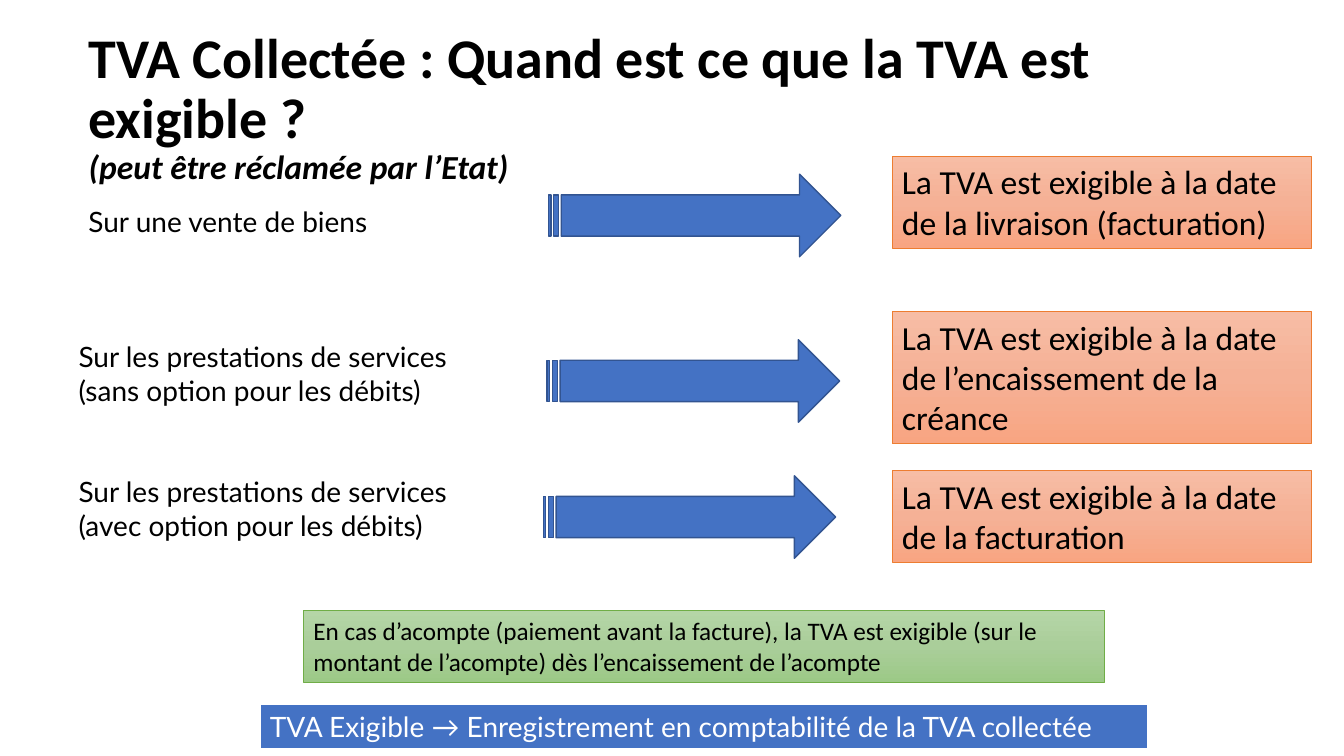
from copy import deepcopy
from dataclasses import dataclass
from typing import Any

from pptx import Presentation
from pptx.dml.color import RGBColor
from pptx.enum.shapes import MSO_SHAPE
from pptx.enum.text import MSO_ANCHOR, MSO_AUTO_SIZE, PP_ALIGN
from pptx.oxml.ns import qn
from pptx.util import Cm, Pt


@dataclass(frozen=True)
class Theme:
    black: str = "000000"
    white: str = "FFFFFF"
    blue: str = "4472C4"
    blue_line: str = "325491"
    orange: tuple[str, ...] = ("F7BDA5", "F5B196", "F8A582")
    orange_line: str = "ED7D31"
    green: tuple[str, ...] = ("B5D5A7", "AACE9A", "9CC987")
    green_line: str = "70AD47"
    heading: str = "Calibri"
    label: str = "Lato"
    title_size: int = 40
    rule_size: int = 24
    label_size: int = 20
    note_size: int = 18


@dataclass(frozen=True)
class Box:
    left: float
    top: float
    width: float
    height: float

    def lengths(self) -> tuple[Cm, ...]:
        return tuple(Cm(v) for v in (self.left, self.top, self.width, self.height))


@dataclass(frozen=True)
class Case:
    label: str
    label_box: Box
    arrow_left: float
    arrow_top: float
    rule: str
    rule_top: float
    rule_height: float


T = Theme()

CASES = (
    Case("Sur une vente de biens", Box(1.98, 5.03, 9.27, 1.12), 13.82, 4.39,
         "La TVA est exigible à la date de la livraison (facturation)", 3.94, 2.31),
    Case("Sur les prestations de services (sans option pour les débits)",
         Box(1.73, 8.43, 11.07, 1.96), 13.79, 8.56,
         "La TVA est exigible à la date de l’encaissement de la créance", 7.85, 3.33),
    Case("Sur les prestations de services (avec option pour les débits)",
         Box(1.73, 11.84, 11.07, 1.96), 13.69, 11.99,
         "La TVA est exigible à la date de la facturation", 11.86, 2.31),
)


def add_run(p: Any, text: str, size: int, font: str, color: str, **extra: bool) -> None:
    r = p.add_run()
    r.text = text
    for name, value in {"size": Pt(size), "name": font, **extra}.items():
        setattr(r.font, name, value)
    r.font.color.rgb = RGBColor.from_string(color)


def write(sp: Any, text: str, size: int, font: str, color: str) -> None:
    tf = sp.text_frame
    formats = {"word_wrap": True, "auto_size": MSO_AUTO_SIZE.SHAPE_TO_FIT_TEXT,
               "vertical_anchor": MSO_ANCHOR.TOP}
    for name, value in formats.items():
        setattr(tf, name, value)
    p = tf.paragraphs[0]
    p.alignment = PP_ALIGN.LEFT
    add_run(p, text, size, font, color)


def add_shape(s: Any, kind: MSO_SHAPE, box: Box, fill: str | tuple[str, ...],
              line: str, line_width: float) -> Any:
    sp = s.shapes.add_shape(kind, *box.lengths())
    sp.shadow.inherit = False
    if isinstance(fill, str):
        sp.fill.solid()
        sp.fill.fore_color.rgb = RGBColor.from_string(fill)
    else:
        sp.fill.gradient()
        sp.fill.gradient_angle = 270
        # A new gradient has two stops; the middle one is added here
        first = next(sp._element.spPr.iter(qn("a:gs")))
        first.addnext(deepcopy(first))
        for i, (stop, color) in enumerate(zip(sp.fill.gradient_stops, fill)):
            stop.position = i / 2
            stop.color.rgb = RGBColor.from_string(color)
    sp.line.color.rgb = RGBColor.from_string(line)
    sp.line.width = Pt(line_width)
    return sp


def add_title(s: Any) -> None:
    title = s.shapes.title
    title.left, title.top, title.width, title.height = Box(1.98, 1.93, 31.06, 1.6).lengths()
    tf = title.text_frame
    formats = {"word_wrap": True, "auto_size": MSO_AUTO_SIZE.NONE,
               "vertical_anchor": MSO_ANCHOR.MIDDLE, "margin_right": Cm(1.5)}
    for name, value in formats.items():
        setattr(tf, name, value)
    p = tf.paragraphs[0]
    p.alignment, p.line_spacing = PP_ALIGN.LEFT, 0.9
    add_run(p, "TVA Collectée : Quand est ce que la TVA est exigible ?",
            T.title_size, T.heading, T.black, bold=True)
    p.add_line_break()
    add_run(p, "(peut être réclamée par l’Etat)",
            T.rule_size, T.heading, T.black, bold=True, italic=True)


def add_case(s: Any, case: Case) -> None:
    label = s.shapes.add_textbox(*case.label_box.lengths())
    write(label, case.label, T.label_size, T.label, T.black)
    add_shape(s, MSO_SHAPE.STRIPED_RIGHT_ARROW,
              Box(case.arrow_left, case.arrow_top, 7.37, 2.08), T.blue, T.blue_line, 1)
    rule = add_shape(s, MSO_SHAPE.RECTANGLE,
                     Box(22.48, case.rule_top, 10.57, case.rule_height),
                     T.orange, T.orange_line, 0.5)
    write(rule, case.rule, T.rule_size, T.heading, T.black)


def main() -> None:
    prs = Presentation()
    prs.slide_width, prs.slide_height = Cm(33.87), Cm(19.05)
    s = prs.slides.add_slide(prs.slide_layouts[5])
    add_title(s)

    # Sale types, each with its due date
    for case in CASES:
        add_case(s, case)

    # Deposit note
    note = add_shape(s, MSO_SHAPE.RECTANGLE, Box(7.65, 15.39, 20.19, 1.8),
                     T.green, T.green_line, 0.5)
    write(note, "En cas d’acompte (paiement avant la facture), la TVA est exigible "
          "(sur le montant de l’acompte) dès l’encaissement de l’acompte",
          T.note_size, T.heading, T.black)

    # Conclusion banner
    banner = add_shape(s, MSO_SHAPE.RECTANGLE, Box(6.55, 17.75, 22.38, 1.12),
                       T.blue, T.white, 1.5)
    write(banner, "TVA Exigible → Enregistrement en comptabilité de la TVA collectée",
          T.label_size, T.label, T.white)

    prs.save("out.pptx")


if __name__ == "__main__":
    main()
